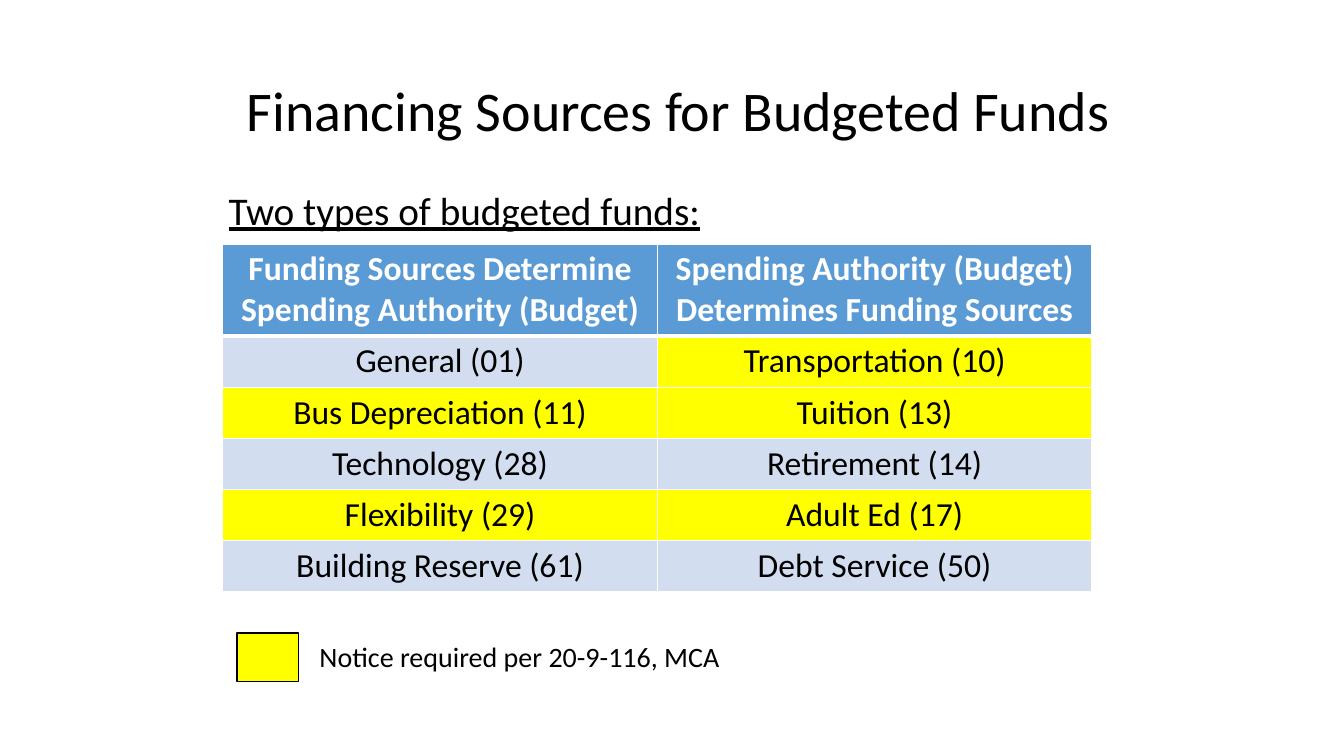
from lxml.etree import SubElement
from pptx import Presentation
from pptx.dml.color import RGBColor
from pptx.enum.shapes import MSO_SHAPE as Preset
from pptx.enum.text import MSO_ANCHOR as Anchor, MSO_AUTO_SIZE as AutoSize, PP_ALIGN as Align
from pptx.oxml.ns import qn
from pptx.util import Inches, Pt

BLACK = RGBColor(0x00, 0x00, 0x00)
WHITE = RGBColor(0xFF, 0xFF, 0xFF)
HEADER_BLUE = RGBColor(0x5B, 0x9B, 0xD5)
PALE_BLUE = RGBColor(0xD2, 0xDE, 0xEF)
NOTICE_YELLOW = RGBColor(0xFF, 0xFF, 0x00)

HEADERS = (
    "Funding Sources Determine Spending Authority (Budget)",
    "Spending Authority (Budget) Determines Funding Sources",
)
FUNDS = (
    ("General (01)", "Transportation (10)"),
    ("Bus Depreciation (11)", "Tuition (13)"),
    ("Technology (28)", "Retirement (14)"),
    ("Flexibility (29)", "Adult Ed (17)"),
    ("Building Reserve (61)", "Debt Service (50)"),
)
NOTICE_FUNDS = {
    "Transportation (10)",
    "Bus Depreciation (11)",
    "Tuition (13)",
    "Flexibility (29)",
    "Adult Ed (17)",
}


class FundSlide:
    """Holds the text style and the slide being built."""

    font_name = "Calibri"

    def __init__(self, slide):
        self.slide = slide

    def style(self, paragraph, size, color=BLACK, bold=False, underline=False):
        for run in paragraph.runs:
            font = run.font
            font.name = self.font_name
            font.size = Pt(size)
            font.color.rgb = color
            font.bold = bold
            font.underline = underline

    def add_text(self, text, box, size, anchor=Anchor.TOP, wrap=True,
                 line_spacing=1.0, space_before=0, underline=False):
        shape = self.slide.shapes.add_textbox(*map(Inches, box))
        frame = shape.text_frame
        frame.text = text
        frame.word_wrap = wrap
        frame.auto_size = AutoSize.NONE if wrap else AutoSize.SHAPE_TO_FIT_TEXT
        frame.vertical_anchor = anchor
        paragraph = frame.paragraphs[0]
        paragraph.line_spacing = line_spacing
        paragraph.space_before = Pt(space_before)
        self.style(paragraph, size, underline=underline)

    def add_swatch(self, box, color):
        shape = self.slide.shapes.add_shape(Preset.RECTANGLE, *map(Inches, box))
        shape.shadow.inherit = False
        shape.fill.solid()
        shape.fill.fore_color.rgb = color
        shape.line.color.rgb = BLACK
        shape.line.width = Pt(1)

    def add_borders(self, cell, top, bottom):
        properties = cell._tc.get_or_add_tcPr()
        for side, width in (("L", 1), ("R", 1), ("T", top), ("B", bottom)):
            line = SubElement(properties, qn(f"a:ln{side}"), w=str(Pt(width)))
            fill = SubElement(line, qn("a:solidFill"))
            SubElement(fill, qn("a:srgbClr"), val=str(WHITE))

    def fill_cell(self, cell, text, fill, color, bold, top, bottom):
        self.add_borders(cell, top, bottom)
        cell.fill.solid()
        cell.fill.fore_color.rgb = fill
        cell.text_frame.text = text
        paragraph = cell.text_frame.paragraphs[0]
        paragraph.alignment = Align.CENTER
        self.style(paragraph, 24, color, bold)

    def add_fund_table(self, box, header_height, row_height):
        rows = (HEADERS, *FUNDS)
        frame = self.slide.shapes.add_table(len(rows), len(HEADERS), *map(Inches, box))
        table = frame.table
        for row_index, texts in enumerate(rows):
            is_header = row_index == 0
            table.rows[row_index].height = Inches(header_height if is_header else row_height)
            for column_index, text in enumerate(texts):
                body_fill = NOTICE_YELLOW if text in NOTICE_FUNDS else PALE_BLUE
                self.fill_cell(
                    table.cell(row_index, column_index),
                    text,
                    fill=HEADER_BLUE if is_header else body_fill,
                    color=WHITE if is_header else BLACK,
                    bold=is_header,
                    top=3 if row_index == 1 else 1,
                    bottom=3 if is_header else 1,
                )


def main():
    presentation = Presentation()
    presentation.slide_width = Inches(13.33)
    presentation.slide_height = Inches(7.5)
    page = FundSlide(presentation.slides.add_slide(presentation.slide_layouts[6]))

    page.add_text("Financing Sources for Budgeted Funds", (2.35, 0.4, 8.82, 1.45), 40,
                  anchor=Anchor.MIDDLE, line_spacing=0.9)
    page.add_text("Two types of budgeted funds:", (2.17, 1.85, 9, 0.75), 28,
                  line_spacing=0.9, space_before=10, underline=True)
    page.add_fund_table((2.21, 2.42, 8.62, 3.4), header_height=0.9, row_height=0.5)
    page.add_swatch((2.35, 6.28, 0.61, 0.48), NOTICE_YELLOW)
    page.add_text("Notice required per 20-9-116, MCA", (3.07, 6.3, 4.21, 0.44), 20, wrap=False)

    presentation.save("out.pptx")


if __name__ == "__main__":
    main()
